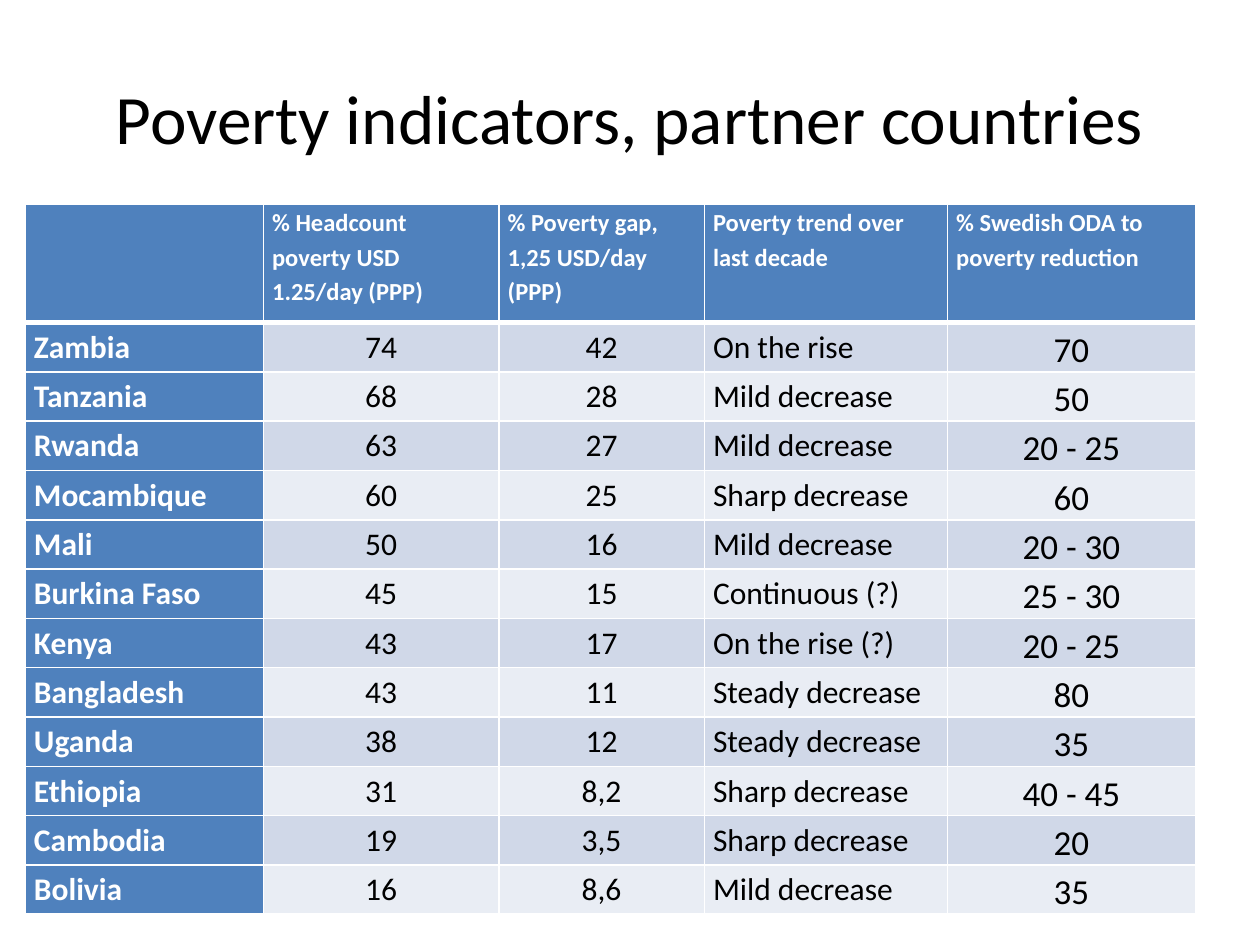
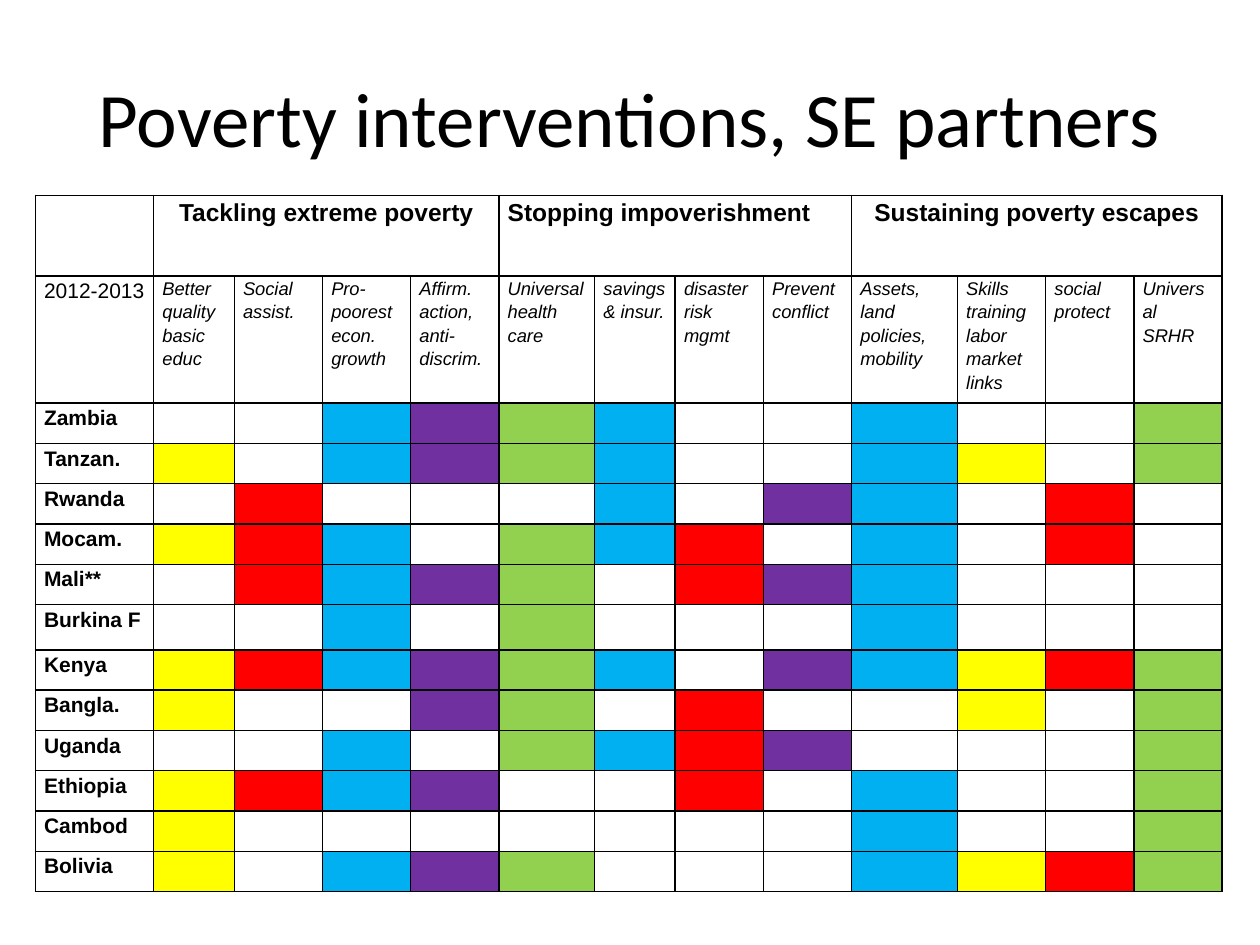
import pptx
import pptx.util
import pptx.dml.color
import pptx.enum.text
import lxml.etree
from pptx.oxml.ns import qn

Inches = pptx.util.Inches
Pt = pptx.util.Pt
ALIGN = pptx.enum.text.PP_ALIGN

COLORS = {
    "ink": "000000",
    "white": "FFFFFF",
    "header": "4F81BD",
    "band_dark": "D0D8E8",
    "band_light": "E9EDF4",
    "education": "FFFF00",
    "protection": "FF0000",
    "economy": "00B0F0",
    "rights": "7030A0",
    "health": "92D050",
}

INDICATOR_HEADINGS = [
    "",
    "% Headcount poverty USD 1.25/day (PPP)",
    "% Poverty gap, 1,25 USD/day (PPP)",
    "Poverty trend over last decade",
    "% Swedish ODA to poverty reduction",
]
INDICATORS = [
    ("Zambia", "74", "42", "On the rise", "70"),
    ("Tanzania", "68", "28", "Mild decrease", "50"),
    ("Rwanda", "63", "27", "Mild decrease", "20 - 25"),
    ("Mocambique", "60", "25", "Sharp decrease", "60"),
    ("Mali", "50", "16", "Mild decrease", "20 - 30"),
    ("Burkina Faso", "45", "15", "Continuous (?)", "25 - 30"),
    ("Kenya", "43", "17", "On the rise (?)", "20 - 25"),
    ("Bangladesh", "43", "11", "Steady decrease", "80"),
    ("Uganda", "38", "12", "Steady decrease", "35"),
    ("Ethiopia", "31", "8,2", "Sharp decrease", "40 - 45"),
    ("Cambodia", "19", "3,5", "Sharp decrease", "20"),
    ("Bolivia", "16", "8,6", "Mild decrease", "35"),
]

GOALS = [
    ("Tackling extreme poverty", ALIGN.CENTER),
    ("Stopping impoverishment", ALIGN.LEFT),
    ("Sustaining poverty escapes", ALIGN.CENTER),
]
INTERVENTIONS = [
    ("Better quality basic\neduc", "education"),
    ("Social assist.", "protection"),
    ("Pro-poorest econ. growth", "economy"),
    ("Affirm.\naction, anti-discrim.", "rights"),
    ("Universal health care", "health"),
    ("savings & insur.", "economy"),
    ("disaster risk mgmt", "protection"),
    ("Prevent conflict", "rights"),
    ("Assets, land policies, mobility", "economy"),
    ("Skills training labor market links", "education"),
    ("social protect", "protection"),
    ("Universal SRHR", "health"),
]
COVERAGE = [
    ("Zambia", "001111001001"),
    ("Tanzan.", "101111001101"),
    ("Rwanda", "010001011010"),
    ("Mocam.", "111011101010"),
    ("Mali**", "011110111000"),
    ("Burkina F", "001010001000"),
    ("Kenya", "111111011111"),
    ("Bangla.", "100110100101"),
    ("Uganda", "001011110001"),
    ("Ethiopia", "111100101001"),
    ("Cambod", "100000001001"),
    ("Bolivia", "101110001111"),
]


def rgb(color):
    return pptx.dml.color.RGBColor.from_string(COLORS[color])


def format_runs(paragraph, font, size, color, bold=False, italic=False):
    for run in paragraph.runs:
        run.font.name = font
        run.font.size = Pt(size)
        run.font.color.rgb = rgb(color)
        run.font.bold = bold
        run.font.italic = italic


def add_titled_slide(deck, heading, size):
    slide = deck.slides.add_slide(deck.slide_layouts[5])
    title = slide.shapes.title
    title.left, title.top = Inches(0.5), Inches(0.3)
    title.width, title.height = Inches(9), Inches(1.25)
    title.text_frame.text = heading
    title.text_frame.vertical_anchor = pptx.enum.text.MSO_ANCHOR.MIDDLE
    paragraph = title.text_frame.paragraphs[0]
    paragraph.alignment = ALIGN.CENTER
    format_runs(paragraph, "Calibri", size, "ink")
    return slide


def add_grid(slide, left, top, widths, heights):
    frame = slide.shapes.add_table(
        len(heights), len(widths), Inches(left), Inches(top),
        Inches(sum(widths)), Inches(sum(heights)))
    grid = frame.table
    grid.first_row = grid.horz_banding = False
    for column, width in zip(grid.columns, widths):
        column.width = Inches(width)
    for row, height in zip(grid.rows, heights):
        row.height = Inches(height)
    return grid


def set_borders(cell, color, top=1, bottom=1):
    properties = cell._tc.get_or_add_tcPr()
    for edge, width in (("L", 1), ("R", 1), ("T", top), ("B", bottom)):
        line = lxml.etree.SubElement(properties, qn(f"a:ln{edge}"), w=str(Pt(width)))
        fill = lxml.etree.SubElement(line, qn("a:solidFill"))
        lxml.etree.SubElement(fill, qn("a:srgbClr"), val=COLORS[color])


def fill_cell(cell, fill):
    if fill:
        cell.fill.solid()
        cell.fill.fore_color.rgb = rgb(fill)
    else:
        cell.fill.background()


def write_cell(cell, text, font, size, color="ink", align=ALIGN.LEFT,
               bold=False, italic=False):
    cell.margin_left = cell.margin_right = Inches(0.07)
    cell.margin_top = cell.margin_bottom = 0
    cell.text_frame.text = text
    for paragraph in cell.text_frame.paragraphs:
        paragraph.alignment = align
        paragraph.line_spacing = 1.15
        format_runs(paragraph, font, size, color, bold, italic)
        if not text:
            lxml.etree.SubElement(paragraph._p, qn("a:endParaRPr"), sz=str(size * 100))


def add_indicators(slide):
    grid = add_grid(slide, 0.2, 1.62, [1.89, 1.87, 1.63, 1.93, 1.97],
                    [0.94] + [0.39] * len(INDICATORS))
    for column, heading in enumerate(INDICATOR_HEADINGS):
        cell = grid.cell(0, column)
        set_borders(cell, "white", bottom=3)
        fill_cell(cell, "header")
        write_cell(cell, heading, "Calibri", 14, "white", bold=True)

    sizes = [18, 18, 18, 18, 20]
    aligns = [ALIGN.LEFT, ALIGN.CENTER, ALIGN.CENTER, ALIGN.LEFT, ALIGN.CENTER]
    for row, record in enumerate(INDICATORS, 1):
        band = "band_dark" if row % 2 else "band_light"
        for column, value in enumerate(record):
            is_country = column == 0
            cell = grid.cell(row, column)
            set_borders(cell, "white", top=3 if row == 1 else 1)
            fill_cell(cell, "header" if is_country else band)
            write_cell(cell, value, "Calibri", sizes[column],
                       "white" if is_country else "ink", aligns[column], bold=is_country)


def add_interventions(slide):
    widths = [0.94, 0.64, 0.7, 0.7, 0.7, 0.76, 0.64, 0.7, 0.7, 0.84, 0.7, 0.7, 0.7]
    heights = [0.64, 1.01] + [0.36 if country == "Burkina F" else 0.32
                              for country, _ in COVERAGE]
    grid = add_grid(slide, 0.28, 1.55, widths, heights)
    for cell in grid.iter_cells():
        set_borders(cell, "ink")
        fill_cell(cell, None)

    write_cell(grid.cell(0, 0), "", "Arial", 12)
    for index, (goal, align) in enumerate(GOALS):
        first = 1 + 4 * index
        grid.cell(0, first).merge(grid.cell(0, first + 3))
        write_cell(grid.cell(0, first), goal, "Arial", 14, align=align, bold=True)

    write_cell(grid.cell(1, 0), "2012-2013", "Arial", 12)
    for column, (intervention, _) in enumerate(INTERVENTIONS, 1):
        write_cell(grid.cell(1, column), intervention, "Arial", 10.5, italic=True)

    for row, (country, marks) in enumerate(COVERAGE, 2):
        write_cell(grid.cell(row, 0), country, "Arial", 12, bold=True)
        for column, (mark, (_, theme)) in enumerate(zip(marks, INTERVENTIONS), 1):
            cell = grid.cell(row, column)
            write_cell(cell, "", "Arial", 12)
            fill_cell(cell, theme if mark == "1" else None)


def main():
    deck = pptx.Presentation()
    deck.slide_width, deck.slide_height = Inches(10), Inches(7.5)
    add_indicators(add_titled_slide(deck, "Poverty indicators, partner countries", 39.6))
    add_interventions(add_titled_slide(deck, "Poverty interventions, SE partners", 44))
    deck.save("out.pptx")


if __name__ == "__main__":
    main()
